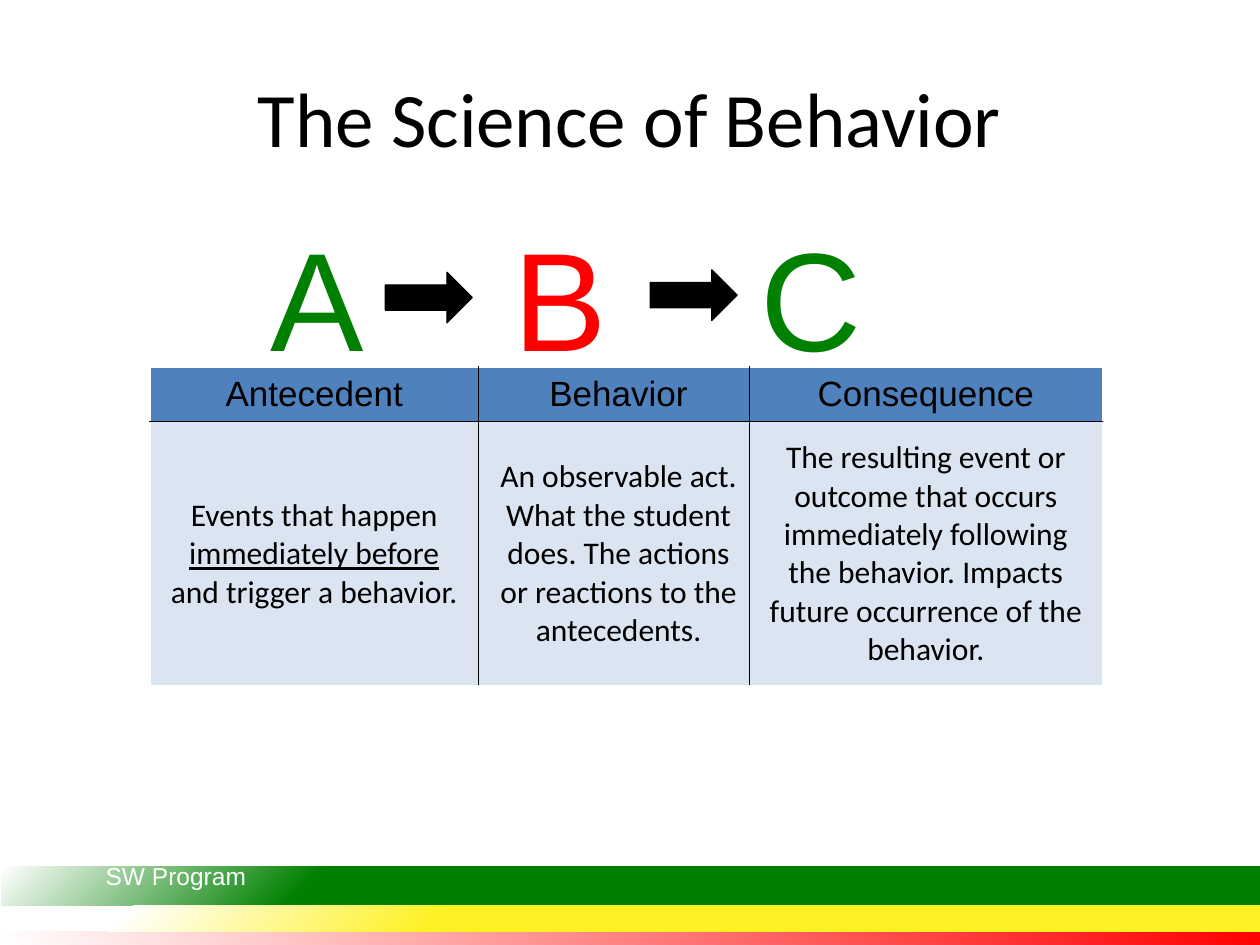
from lxml import etree
from pptx import Presentation
from pptx.dml.color import RGBColor as RGB
from pptx.enum.shapes import MSO_SHAPE as SHAPE
from pptx.enum.text import MSO_ANCHOR as ANCHOR, PP_ALIGN as ALIGN
from pptx.oxml.ns import qn
from pptx.util import Cm, Pt

COLORS = {
    "black": "000000", "white": "FFFFFF", "green": "008000", "red": "FF0000",
    "yellow": "FFF123", "header": "4F81BD", "body": "DBE5F1",
}
HEADERS = ["Antecedent", "Behavior", "Consequence"]
DEFINITIONS = [
    ["Events that happen ", "immediately before ", "and trigger a behavior."],
    ["An observable act. What the student does. "
     "The actions or reactions to the antecedents."],
    ["The resulting event or outcome that occurs immediately following "
     "the behavior. Impacts future occurrence of the behavior."],
]


def rgb(name):
    """Return the named colour."""
    return RGB.from_string(COLORS[name])


def style(r, size, color="black", font="Calibri"):
    """Set the font of a run."""
    r.font.size, r.font.name, r.font.bold = Pt(size), font, False
    r.font.color.rgb = rgb(color)


def add_text(s, box, text, size, color="black", font="Calibri"):
    """Add a one-paragraph text box and return its frame."""
    tf = s.shapes.add_textbox(*map(Cm, box)).text_frame
    tf.word_wrap = True
    tf.text = text
    for r in tf.paragraphs[0].runs:
        style(r, size, color, font)
    return tf


def add_band(s, box, color, stops, focus):
    """Add a footer band that fades to white at its left end."""
    sp = s.shapes.add_shape(SHAPE.RECTANGLE, *map(Cm, box))
    sp.shadow.inherit = False
    sp.line.fill.background()
    sp.fill.gradient()
    for stop, name, pos in zip(sp.fill.gradient_stops, (color, "white"), stops):
        stop.color.rgb, stop.position = rgb(name), pos
    grad = sp._element.spPr.find(qn("a:gradFill"))
    grad.remove(grad.find(qn("a:lin")))
    path = etree.SubElement(grad, qn("a:path"), path="circle")
    etree.SubElement(path, qn("a:fillToRect"), focus)


def add_footer(s, x, y, w):
    """Add the three colour bands and their label."""
    bottom_right = {"l": "100000", "t": "100000"}
    top_right = {"l": "100000", "b": "100000"}
    add_band(s, (x, y + 1.3, w, 0.3), "red", (0, 1), top_right)
    add_band(s, (x, y, w, 0.79), "green", (0.75, 1), bottom_right)
    add_band(s, (x, y + 0.79, w, 0.51), "yellow", (0.65, 0.9), bottom_right)
    add_text(s, (x + 1.85, y - 0.23, 4.88, 1.02), "SW Program", 14, "white", "Arial")


def add_title(s, x, y, w, h):
    """Add the centred slide title."""
    tf = add_text(s, (x, y, w, h), "The Science of Behavior", 44)
    tf.vertical_anchor = ANCHOR.MIDDLE
    tf.paragraphs[0].alignment = ALIGN.CENTER


def add_sequence(s, x, y, w, h):
    """Add the letters A, B, C on centred tab stops with arrows between."""
    tf = add_text(s, (x, y, w, h), "", 80)
    p = tf.paragraphs[0]
    p.alignment = ALIGN.LEFT
    tabs = etree.SubElement(p._p.get_or_add_pPr(), qn("a:tabLst"))
    letters = [("A", "green", 6.15), ("B", "red", 11.05), ("C", "green", 16.1)]
    for letter, color, pos in letters:
        etree.SubElement(tabs, qn("a:tab"), pos=str(Cm(pos)), algn="ctr")
        r = p.add_run()
        r.text = "\t" + letter
        style(r, 80, color, "Arial")
    for left, top in ((7.77, 1.35), (13.11, 1.3)):
        sp = s.shapes.add_shape(SHAPE.RIGHT_ARROW, Cm(x + left), Cm(y + top),
                                Cm(1.75), Cm(1.02))
        sp.shadow.inherit = False
        sp.fill.solid()
        sp.fill.fore_color.rgb = rgb("black")
        sp.line.color.rgb, sp.line.width = rgb("black"), Pt(0.75)


def add_border(cell, side, color):
    """Draw one border of a table cell."""
    ln = etree.SubElement(cell._tc.get_or_add_tcPr(), qn("a:ln" + side),
                          w=str(Pt(1)))
    fill = etree.SubElement(ln, qn("a:solidFill"))
    etree.SubElement(fill, qn("a:srgbClr"), val=COLORS[color])


def fill_cell(cell, row, col, parts):
    """Write and format one cell, with black borders only inside the table."""
    inner = {"L": col > 0, "R": col < 2, "T": row > 0, "B": row < 1}
    for side, inside in inner.items():
        add_border(cell, side, "black" if inside else "white")
    cell.fill.solid()
    cell.fill.fore_color.rgb = rgb("body" if row else "header")
    cell.vertical_anchor = ANCHOR.MIDDLE
    p = cell.text_frame.paragraphs[0]
    p.alignment = ALIGN.CENTER
    if col == 1:
        p._p.get_or_add_pPr().set("marL", str(Cm(0.18)))
    for i, part in enumerate(parts):
        r = p.add_run()
        r.text = part
        style(r, *((18, "black", "Calibri") if row else (20, "black", "Arial")))
        r.font.underline = i == 1


def add_definitions(s, x, y, w, h):
    """Add the table that defines the three terms."""
    table = s.shapes.add_table(2, 3, Cm(x), Cm(y), Cm(w), Cm(h)).table
    table.horz_banding = False
    for column, width in zip(table.columns, (6.63, 5.46, w - 12.09)):
        column.width = Cm(width)
    for row, height in zip(table.rows, (1.09, h - 1.09)):
        row.height = Cm(height)
    for col, (header, parts) in enumerate(zip(HEADERS, DEFINITIONS)):
        fill_cell(table.cell(0, col), 0, col, [header])
        fill_cell(table.cell(1, col), 1, col, parts)


def main():
    """Build the slide and save it."""
    prs = Presentation()
    prs.slide_width, prs.slide_height = Cm(25.4), Cm(19.05)
    s = prs.slides.add_slide(prs.slide_layouts[6])
    add_footer(s, 0.03, 17.47, 25.4)
    add_title(s, 1.27, 0.76, 22.86, 3.18)
    add_sequence(s, 0, 4.14, 22.86, 9.19)
    add_definitions(s, 3.02, 7.4, 19.2, 6.42)
    prs.save("out.pptx")


if __name__ == "__main__":
    main()
